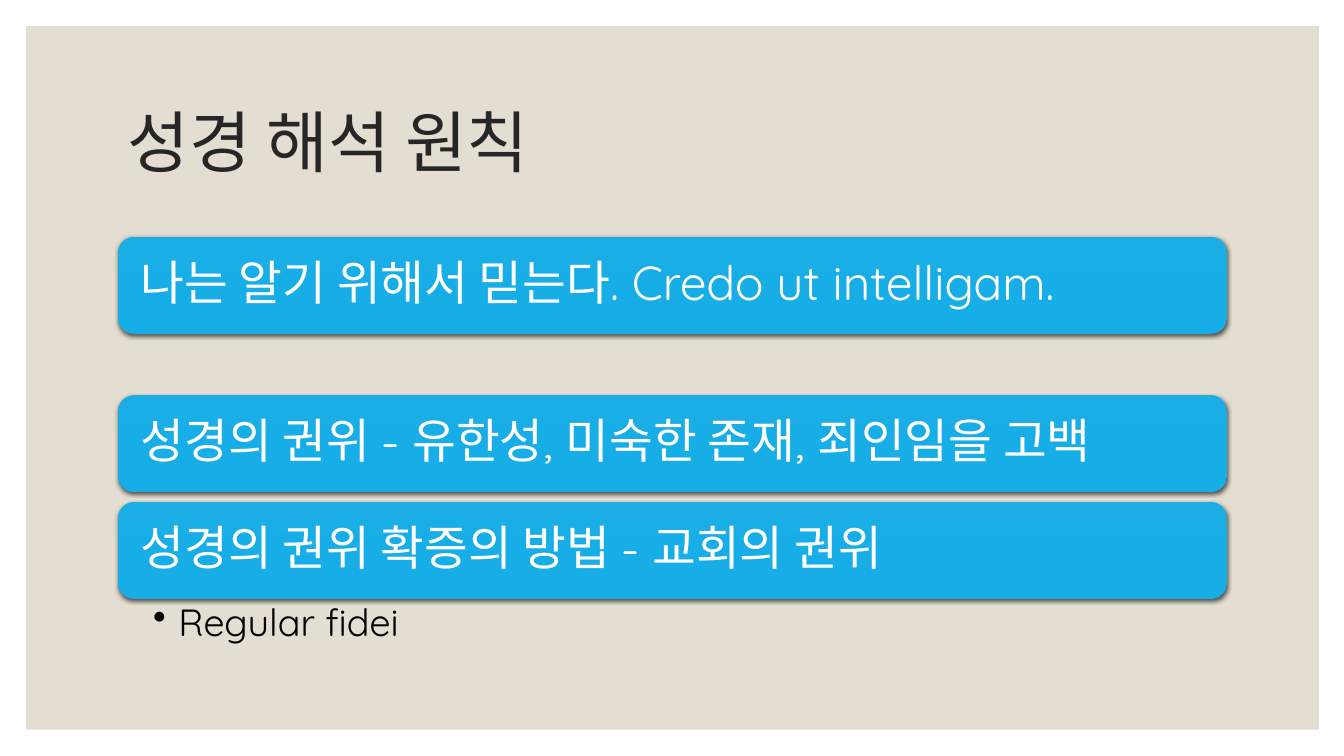
from lxml.etree import SubElement as Sub
from pptx import Presentation
from pptx.dml.color import RGBColor
from pptx.enum.shapes import MSO_SHAPE as Shape
from pptx.enum.text import MSO_ANCHOR as Anchor, PP_ALIGN as Align
from pptx.oxml.ns import qn
from pptx.util import Inches, Pt

FONT = "Quicksand"
SAND = RGBColor(0xE3, 0xDE, 0xD1)
INK = RGBColor(0x26, 0x26, 0x26)
BLACK = RGBColor(0, 0, 0)
WHITE = RGBColor(0xFF, 0xFF, 0xFF)
SKY = RGBColor(0x1C, 0xAD, 0xE4)
AZURE = RGBColor(0x17, 0xAE, 0xE8)
LEFT, WIDTH, BAR = 1.17, 11, 0.96
BARS = [
    (2.35, "나는 알기 위해서 믿는다. Credo ut intelligam."),
    (3.92, "성경의 권위 - 유한성, 미숙한 존재, 죄인임을 고백"),
    (4.98, "성경의 권위 확증의 방법 - 교회의 권위"),
]


def write(shape, text, size, color, anchor, pads):
    """Fill a shape with one styled line and return its paragraph."""
    frame = shape.text_frame
    frame.word_wrap = True
    frame.vertical_anchor = anchor
    frame.margin_left, frame.margin_top, frame.margin_right, frame.margin_bottom = map(Inches, pads)
    para = frame.paragraphs[0]
    para.alignment = Align.LEFT
    para.line_spacing = 0.9
    run = para.add_run()
    run.text = text
    run.font.name = FONT
    run.font.size = Pt(size)
    run.font.color.rgb = color
    return para


def add_box(slide, top, height):
    """Add an empty text box of the content width."""
    return slide.shapes.add_textbox(Inches(LEFT), Inches(top), Inches(WIDTH), Inches(height))


def add_shape(slide, kind, left, top, width, height):
    """Add a preset shape without line or shadow."""
    shape = slide.shapes.add_shape(kind, Inches(left), Inches(top), Inches(width), Inches(height))
    shape.line.fill.background()
    shape.shadow.inherit = False
    return shape


def add_panel(slide):
    """Add the sand panel behind the content."""
    panel = add_shape(slide, Shape.RECTANGLE, 0.26, 0.26, 12.82, 6.98)
    panel.fill.solid()
    panel.fill.fore_color.rgb = SAND


def cast_shadow(shape):
    """Give a shape a soft shadow below it."""
    effects = shape._element.spPr.find(qn("a:effectLst"))
    shadow = Sub(effects, qn("a:outerShdw"), blurRad=str(Pt(3)), dist=str(Pt(1)),
                 dir="5400000", algn="ctr", rotWithShape="0")
    color = Sub(shadow, qn("a:srgbClr"), val=str(BLACK))
    Sub(color, qn("a:alpha"), val="63000")


def add_bar(slide, top, text):
    """Add a rounded gradient bar with its text."""
    bar = add_shape(slide, Shape.ROUNDED_RECTANGLE, LEFT, top, WIDTH, BAR)
    bar.fill.gradient()
    bar.fill.gradient_angle = 270
    first, last = bar.fill.gradient_stops
    first.color.rgb = SKY
    last.color.rgb = AZURE
    last.position = 0.5
    cast_shadow(bar)
    write(bar, text, 34, WHITE, Anchor.MIDDLE, (0.18, 0.14, 0.18, 0.14))


def add_bullet(slide, top, text):
    """Add the bulleted line under the bars."""
    box = add_box(slide, top, 0.62)
    para = write(box, text, 27, BLACK, Anchor.TOP, (0.35, 0.05, 0.26, 0.05))
    props = para._p.get_or_add_pPr()
    props.set("marL", str(Inches(0.25)))
    props.set("indent", str(Inches(-0.25)))
    Sub(props, qn("a:buChar"), char="•")


def main():
    """Build and save the slide."""
    deck = Presentation()
    deck.slide_width, deck.slide_height = Inches(13.33), Inches(7.5)
    slide = deck.slides.add_slide(deck.slide_layouts[6])
    add_panel(slide)
    title = add_box(slide, 0.7, 1.5)
    write(title, "성경 해석 원칙", 48, INK, Anchor.MIDDLE, (0.1, 0.05, 0.1, 0.05))
    for top, text in BARS:
        add_bar(slide, top, text)
    add_bullet(slide, 5.94, "Regular fidei")
    deck.save("out.pptx")


if __name__ == "__main__":
    main()
